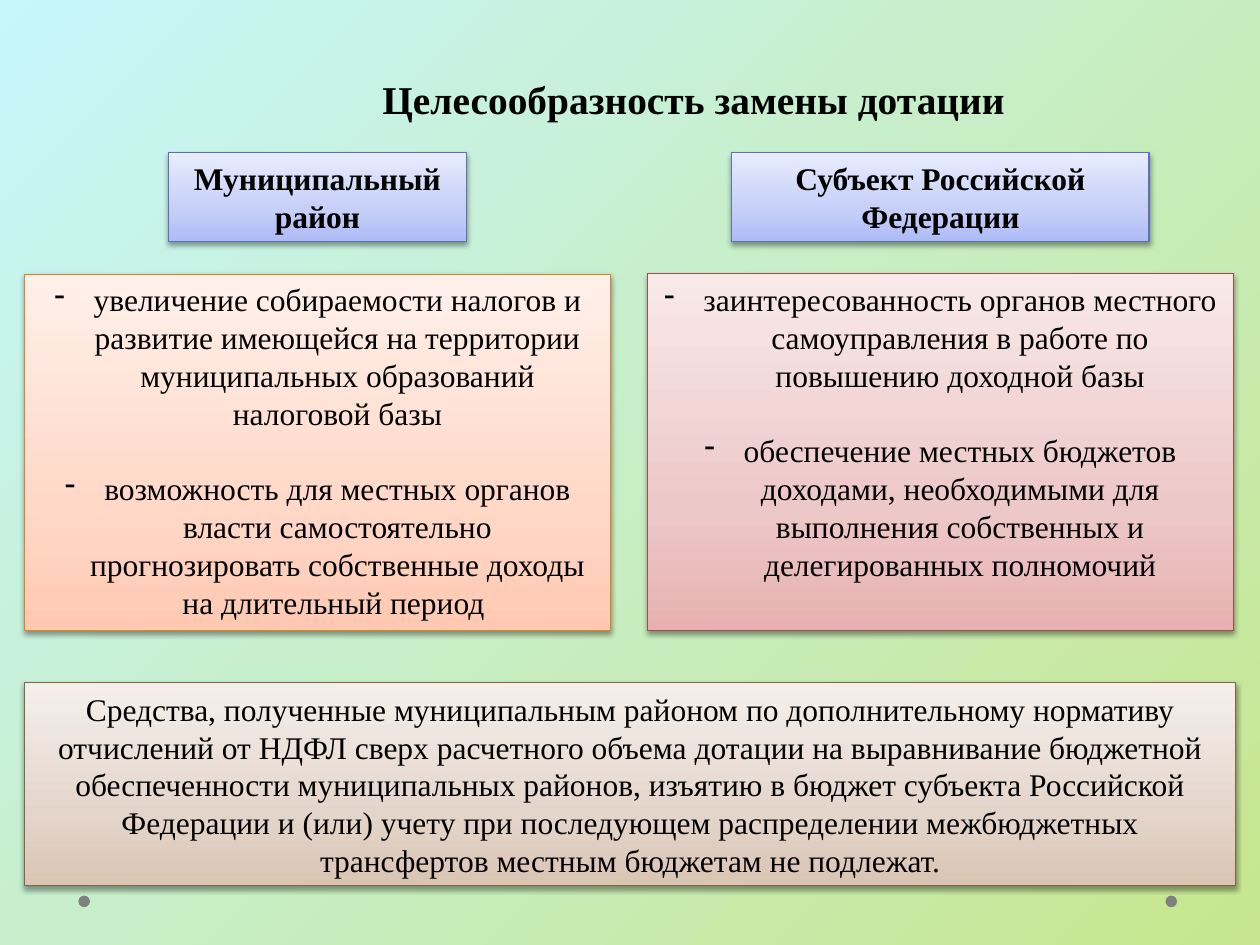
from copy import deepcopy

from pptx import Presentation
from pptx.dml.color import RGBColor
from pptx.enum.shapes import MSO_SHAPE
from pptx.enum.text import MSO_ANCHOR, PP_ALIGN
from pptx.oxml import parse_xml
from pptx.oxml.ns import nsdecls, qn
from pptx.util import Pt

RECTANGLE = MSO_SHAPE.RECTANGLE
OVAL = MSO_SHAPE.OVAL
CENTER = PP_ALIGN.CENTER
MIDDLE = MSO_ANCHOR.MIDDLE
BOTTOM = MSO_ANCHOR.BOTTOM

FONT = "Times New Roman"
BODY_SIZE = 18
TITLE_SIZE = 22.5
INDENT = Pt(22.5)
BULLET_GAP = Pt(21.6)

BLACK = RGBColor(0x00, 0x00, 0x00)
GRAY = RGBColor(0x80, 0x80, 0x80)
SKY = RGBColor(0xC7, 0xF6, 0xFB)
LIME = RGBColor(0xC7, 0xE6, 0x8F)
BLUE_LINE = RGBColor(0x5C, 0x72, 0xB2)
ORANGE_LINE = RGBColor(0xE6, 0x81, 0x1C)
RED_LINE = RGBColor(0x9A, 0x4E, 0x4E)
BROWN_LINE = RGBColor(0x83, 0x64, 0x45)
BLUE_FILL = (RGBColor(0xAD, 0xBB, 0xF6), RGBColor(0xC5, 0xCF, 0xF8), RGBColor(0xE8, 0xEC, 0xFD))
ORANGE_FILL = (RGBColor(0xFF, 0xC9, 0xB1), RGBColor(0xFF, 0xD8, 0xC8), RGBColor(0xFF, 0xF0, 0xEA))
RED_FILL = (RGBColor(0xE8, 0xB0, 0xB0), RGBColor(0xED, 0xC8, 0xC8), RGBColor(0xF9, 0xE9, 0xE9))
BROWN_FILL = (RGBColor(0xDA, 0xC4, 0xB4), RGBColor(0xE4, 0xD5, 0xCB), RGBColor(0xF5, 0xEF, 0xEB))
STOP_POSITIONS = (0, 0.35, 1)

TITLE = "Целесообразность замены дотации"
DISTRICT = "Муниципальный район"
REGION = "Субъект Российской Федерации"
DISTRICT_REASONS = (
    "увеличение собираемости налогов и развитие имеющейся на территории "
    "муниципальных образований налоговой базы",
    "возможность для местных органов власти самостоятельно прогнозировать "
    "собственные доходы на длительный период ",
)
REGION_REASONS = (
    "заинтересованность органов местного самоуправления в работе по "
    "повышению доходной базы",
    "обеспечение местных бюджетов доходами, необходимыми для выполнения "
    "собственных и делегированных полномочий",
)
CONCLUSION = (
    "Средства, полученные муниципальным районом по дополнительному нормативу "
    "отчислений от НДФЛ сверх расчетного объема дотации на выравнивание бюджетной "
    "обеспеченности муниципальных районов, изъятию в бюджет субъекта Российской "
    "Федерации и (или) учету при последующем распределении межбюджетных "
    "трансфертов местным бюджетам не подлежат."
)

SHADOW = (
    f'<a:outerShdw {nsdecls("a")} blurRad="40000" dist="20000" dir="5400000" rotWithShape="0">'
    '<a:srgbClr val="000000"><a:alpha val="38000"/></a:srgbClr></a:outerShdw>'
)


def set_stops(fill, colors, positions):
    for stop, color, position in zip(fill.gradient_stops, colors, positions):
        stop.color.rgb = color
        stop.position = position


def paint_background(slide):
    fill = slide.background.fill
    fill.gradient()
    fill.gradient_angle = 315
    set_stops(fill, (SKY, LIME), (0, 1))


def style_text(paragraph, size, bold):
    paragraph.alignment = CENTER
    for run in paragraph.runs:
        run.font.name = FONT
        run.font.size = Pt(size)
        run.font.bold = bold
        run.font.color.rgb = BLACK


def add_dot(slide, left):
    dot = slide.shapes.add_shape(OVAL, Pt(left), Pt(511.8), Pt(6.6), Pt(6.6))
    dot.shadow.inherit = False
    dot.fill.solid()
    dot.fill.fore_color.rgb = GRAY
    dot.line.fill.background()


def add_title(slide):
    title = slide.shapes.add_textbox(Pt(72.6), Pt(29.4), Pt(648), Pt(44))
    frame = title.text_frame
    frame.word_wrap = True
    frame.vertical_anchor = BOTTOM
    frame.text = TITLE
    frame.paragraphs[0].line_spacing = Pt(58)
    style_text(frame.paragraphs[0], TITLE_SIZE, True)


def add_panel(slide, bounds, colors, line_color, text, bold=False):
    panel = slide.shapes.add_shape(RECTANGLE, *map(Pt, bounds))
    panel.shadow.inherit = False
    properties = panel._element.spPr
    panel.fill.gradient()
    panel.fill.gradient_angle = 90
    stops = properties.find(".//" + qn("a:gsLst"))
    stops.insert(1, deepcopy(stops[0]))
    set_stops(panel.fill, colors, STOP_POSITIONS)
    panel.line.color.rgb = line_color
    panel.line.width = Pt(0.75)
    properties.find(qn("a:effectLst")).append(parse_xml(SHADOW))
    frame = panel.text_frame
    frame.word_wrap = True
    frame.vertical_anchor = MIDDLE
    frame.text = text
    for paragraph in frame.paragraphs:
        style_text(paragraph, BODY_SIZE, bold)
    return frame


def add_reasons(slide, bounds, colors, line_color, reasons):
    frame = add_panel(slide, bounds, colors, line_color, "\n".join(reasons))
    frame.vertical_anchor = MSO_ANCHOR.TOP
    for index, paragraph in enumerate(frame.paragraphs):
        properties = paragraph._p.get_or_add_pPr()
        properties.set("marL", str(INDENT))
        properties.set("indent", str(-INDENT))
        if index:
            paragraph.space_before = BULLET_GAP
        properties.append(parse_xml(f'<a:buFontTx {nsdecls("a")}/>'))
        properties.append(parse_xml(f'<a:buChar {nsdecls("a")} char="-"/>'))


def main():
    presentation = Presentation()
    presentation.slide_width = Pt(720)
    presentation.slide_height = Pt(540)
    slide = presentation.slides.add_slide(presentation.slide_layouts[6])
    paint_background(slide)
    for left in (666, 44.8):
        add_dot(slide, left)
    add_title(slide)
    add_panel(slide, (14.2, 390.2, 692, 116), BROWN_FILL, BROWN_LINE, CONCLUSION)
    add_panel(slide, (96.4, 87.2, 170, 51), BLUE_FILL, BLUE_LINE, DISTRICT, True)
    add_panel(slide, (418.2, 87.2, 238.4, 51), BLUE_FILL, BLUE_LINE, REGION, True)
    add_reasons(slide, (14.2, 156.7, 334.8, 203.8), ORANGE_FILL, ORANGE_LINE, DISTRICT_REASONS)
    add_reasons(slide, (370, 156.5, 334.8, 203.8), RED_FILL, RED_LINE, REGION_REASONS)
    presentation.save("out.pptx")


if __name__ == "__main__":
    main()
